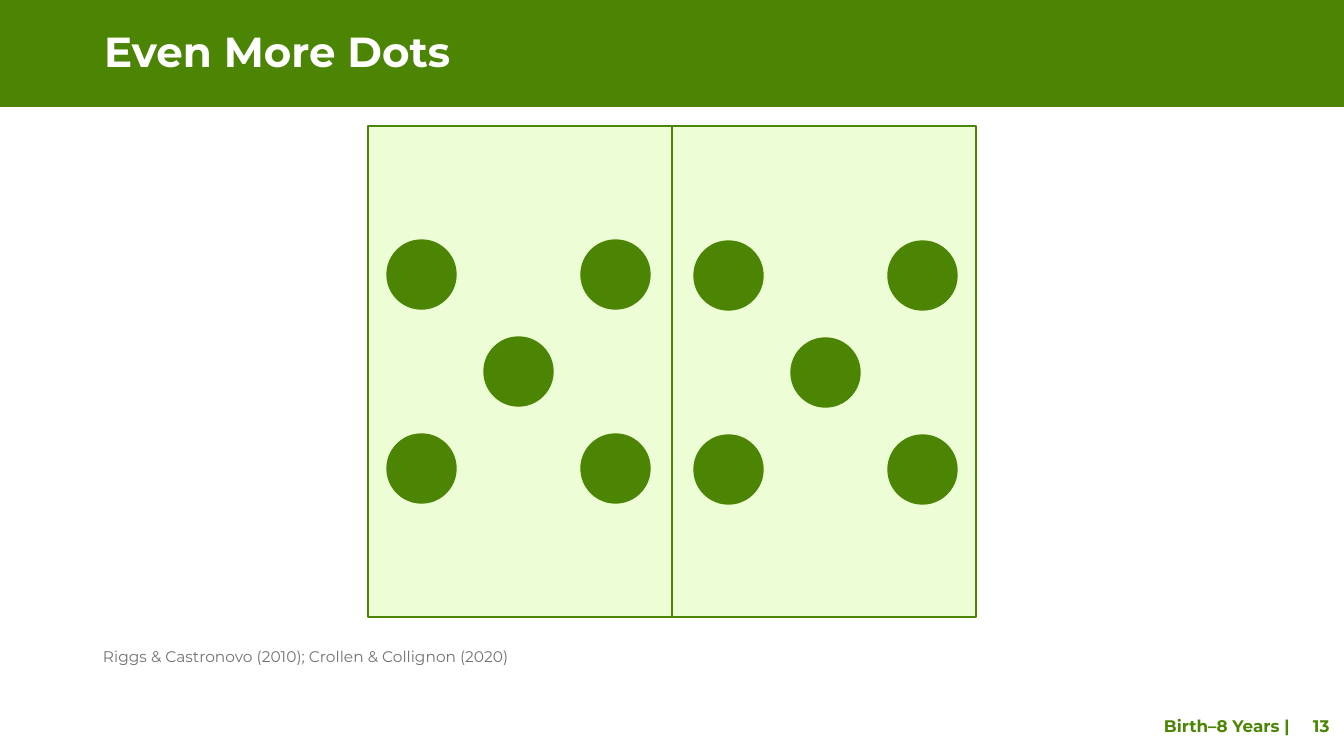
from pptx import Presentation
from pptx import util as u
from pptx.dml.color import RGBColor
from pptx.enum import shapes, text
from pptx.oxml.ns import qn
from lxml import etree

GREEN, PALE, GREY, WHITE = "4C8503", "EDFED6", "767171", "FFFFFF"
FONT = "Montserrat"
TITLE = "Even More Dots"
SOURCE = "Riggs & Castronovo (2010); Crollen & Collignon (2020)"
FOOTER = "Birth–8 Years |\t13"

CARD = (368, 126, 608, 491)
DOT = 69
FIRST = (387, 240)  # top left dot of the left half
HALVES = [(0, 0), (307, 1)]
STEP = 97
FIVE = [(0, 0), (2, 0), (1, 1), (0, 2), (2, 2)]


def px(n):
    return u.Emu(round(n * 914400 / 100.8))


def rgb(code):
    return RGBColor.from_string(code)


def put(kind, box, fill, edge=None):
    """Add a filled preset shape, outlined if edge is given."""
    item = slide.shapes.add_shape(kind, *map(px, box))
    item.shadow.inherit = False
    item.fill.solid()
    item.fill.fore_color.rgb = rgb(fill)
    if edge:
        item.line.color.rgb = rgb(edge)
        item.line.width = u.Pt(1)
    else:
        item.line.fill.background()


def write(words, box, size, color, bold=False, lead=1.0, after=0, inset=10, tab=None):
    frame = slide.shapes.add_textbox(*map(px, box)).text_frame
    frame.word_wrap = True
    frame.vertical_anchor = text.MSO_ANCHOR.MIDDLE
    frame.margin_left = px(inset)
    para = frame.paragraphs[0]
    para.line_spacing = lead
    para.space_after = u.Pt(after)
    if tab:
        stops = etree.SubElement(para._p.get_or_add_pPr(), qn("a:tabLst"))
        etree.SubElement(stops, qn("a:tab"), pos=str(px(tab)), algn="l")
    run = para.add_run()
    run.text = words
    font = run.font
    font.name, font.size, font.bold = FONT, u.Pt(size), bold
    font.color.rgb = rgb(color)


deck = Presentation()
deck.slide_width, deck.slide_height = px(1344), px(756)
slide = deck.slides.add_slide(deck.slide_layouts[6])

write(FOOTER, (957, 706, 384, 40), 12, GREEN, bold=True, inset=207, tab=149)
put(shapes.MSO_SHAPE.RECTANGLE, (0, 0, 1344, 107), GREEN)
write(TITLE, (94, 26, 1194, 56), 30, WHITE, bold=True, lead=0.9)

put(shapes.MSO_SHAPE.RECTANGLE, CARD, PALE, GREEN)
for dx, dy in HALVES:
    for col, row in FIVE:
        spot = (FIRST[0] + dx + col * STEP, FIRST[1] + dy + row * STEP)
        put(shapes.MSO_SHAPE.OVAL, (*spot, DOT, DOT), GREEN, GREEN)

left, top, wide, high = CARD
mid = left + wide / 2
split = slide.shapes.add_connector(
    shapes.MSO_CONNECTOR.STRAIGHT, px(mid), px(top), px(mid), px(top + high))
split.line.color.rgb = rgb(GREEN)
split.line.width = u.Pt(1)
etree.SubElement(split._element.spPr, qn("a:effectLst"))

write(SOURCE, (93, 639, 1159, 31), 11, GREY, lead=1.2, after=6)

deck.save("out.pptx")
